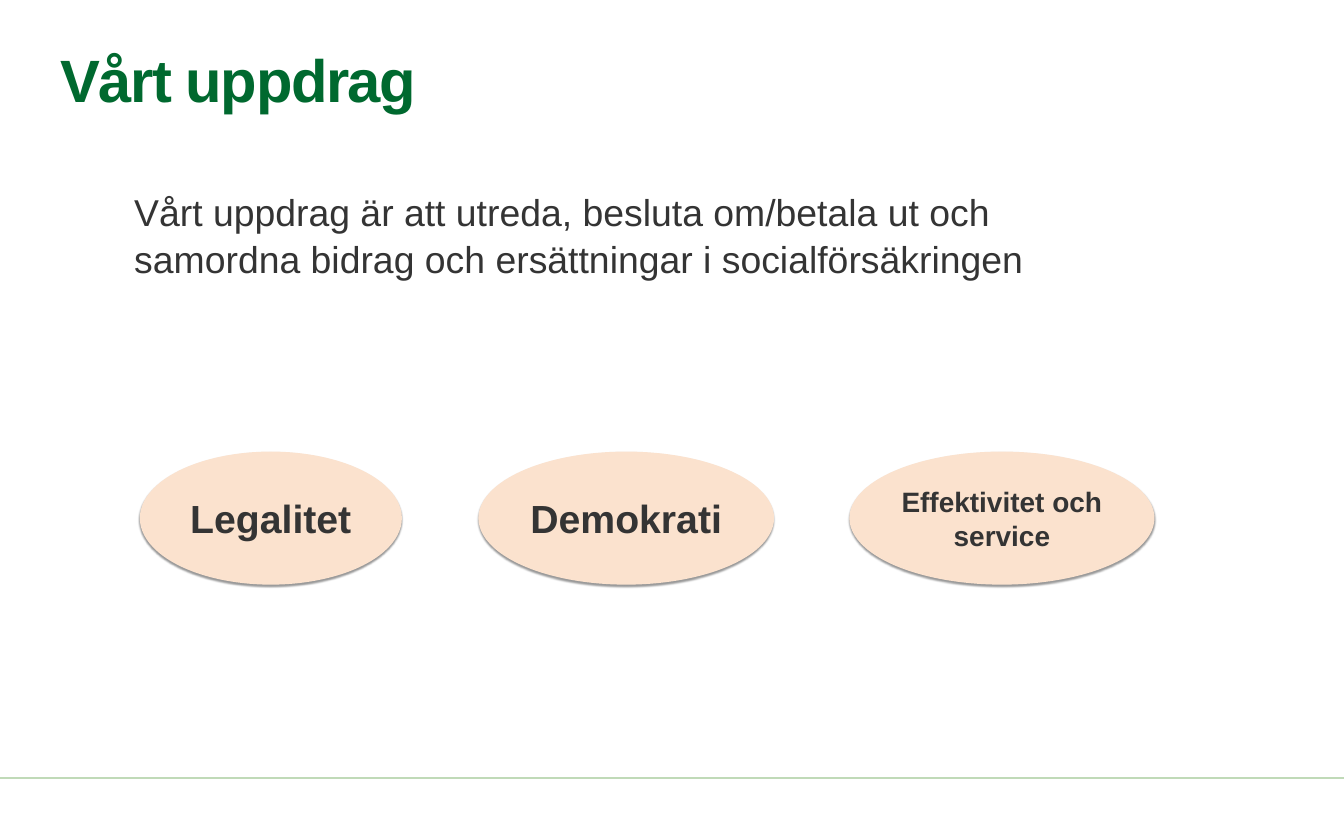
import dataclasses

import pptx
import pptx.dml.color
import pptx.enum.shapes
import pptx.enum.text
import pptx.oxml
import pptx.oxml.ns
import pptx.oxml.xmlchemy
import pptx.util

Inches = pptx.util.Inches
Pt = pptx.util.Pt
ANCHOR = pptx.enum.text.MSO_ANCHOR
ALIGN = pptx.enum.text.PP_ALIGN
qn = pptx.oxml.ns.qn


@dataclasses.dataclass(frozen=True)
class Theme:
    font: str = "Arial"
    title_color: str = "00692F"
    text_color: str = "343434"
    value_fill: str = "FBE2CE"
    rule_color: str = "C0DAB8"
    title_size: float = 32
    body_size: float = 20
    value_size: float = 21
    small_value_size: float = 15


THEME = Theme()
VALUES_TOP, VALUES_HEIGHT = 3.36, 0.99
# label, left, width, type size
VALUES = [
    ("Legalitet", 1.04, 1.95, THEME.value_size),
    ("Demokrati", 3.56, 2.2, THEME.value_size),
    ("Effektivitet och service", 6.32, 2.27, THEME.small_value_size),
]


def rgb(value):
    return pptx.dml.color.RGBColor.from_string(value)


def set_attributes(target, values):
    for name, value in values.items():
        setattr(target, name, value)


def write_text(shape, text, size, color, bold=False, frame_format=None, paragraph_format=None):
    """Fill the shape with one paragraph and return its run."""
    frame = shape.text_frame
    set_attributes(frame, {"word_wrap": True, **(frame_format or {})})
    paragraph = frame.paragraphs[0]
    set_attributes(paragraph, paragraph_format or {})
    run = paragraph.add_run()
    run.text = text
    set_attributes(run.font, {"name": THEME.font, "size": Pt(size), "bold": bold})
    run.font.color.rgb = rgb(color)
    return run


def add_title(slide, box, text):
    title = slide.shapes.title
    set_attributes(title, dict(zip(("left", "top", "width", "height"), box)))
    run = write_text(
        title, text, THEME.title_size, THEME.title_color, bold=True,
        frame_format={"vertical_anchor": ANCHOR.MIDDLE},
        paragraph_format={"alignment": ALIGN.LEFT, "line_spacing": 0.9},
    )
    run._r.get_or_add_rPr().set("spc", "-80")


def add_body(slide, box, text):
    body = slide.shapes.add_textbox(*box)
    write_text(
        body, text, THEME.body_size, THEME.text_color,
        paragraph_format={"line_spacing": 1.05, "space_after": Pt(3)},
    )


def add_soft_shadow(shape):
    shape.shadow.inherit = False
    effects = shape._element.spPr.find(qn("a:effectLst"))
    effects.append(pptx.oxml.parse_xml(
        '<a:outerShdw xmlns:a="http://schemas.openxmlformats.org/drawingml/2006/main" '
        'blurRad="12700" dist="12700" dir="5400000" rotWithShape="0">'
        '<a:srgbClr val="000000"><a:alpha val="40000"/></a:srgbClr></a:outerShdw>'
    ))


def add_value(slide, box, label, size):
    ellipse = slide.shapes.add_shape(pptx.enum.shapes.MSO_SHAPE.OVAL, *box)
    ellipse.fill.solid()
    ellipse.fill.fore_color.rgb = rgb(THEME.value_fill)
    ellipse.line.fill.background()
    add_soft_shadow(ellipse)
    write_text(
        ellipse, label, size, THEME.text_color, bold=True,
        frame_format={
            "vertical_anchor": ANCHOR.MIDDLE,
            "margin_left": Inches(0.03), "margin_right": Inches(0.03),
            "margin_top": Inches(0.06), "margin_bottom": Inches(0.06),
        },
        paragraph_format={"alignment": ALIGN.CENTER, "space_after": Pt(4.5)},
    )


def add_footer_rule(slide, left, top, width):
    rule = slide.shapes.add_connector(
        pptx.enum.shapes.MSO_CONNECTOR.STRAIGHT, left, top, left + width, top)
    rule.line.color.rgb = rgb(THEME.rule_color)
    rule.line.width = Pt(1)
    rule._element.spPr.append(pptx.oxml.xmlchemy.OxmlElement("a:effectLst"))


def main():
    presentation = pptx.Presentation()
    presentation.slide_width = Inches(10)
    presentation.slide_height = Inches(6.25)
    slide = presentation.slides.add_slide(presentation.slide_layouts.get_by_name("Title Only"))

    add_footer_rule(slide, 0, Inches(5.79), presentation.slide_width)
    add_title(slide, [Inches(n) for n in (0.35, 0.1, 9.25, 1.04)], "Vårt uppdrag")
    add_body(
        slide, [Inches(n) for n in (0.9, 1.34, 7.09, 3.86)],
        "Vårt uppdrag är att utreda, besluta om/betala ut och samordna "
        "bidrag och ersättningar i socialförsäkringen",
    )
    for label, left, width, size in VALUES:
        box = [Inches(n) for n in (left, VALUES_TOP, width, VALUES_HEIGHT)]
        add_value(slide, box, label, size)

    presentation.save("out.pptx")


if __name__ == "__main__":
    main()
